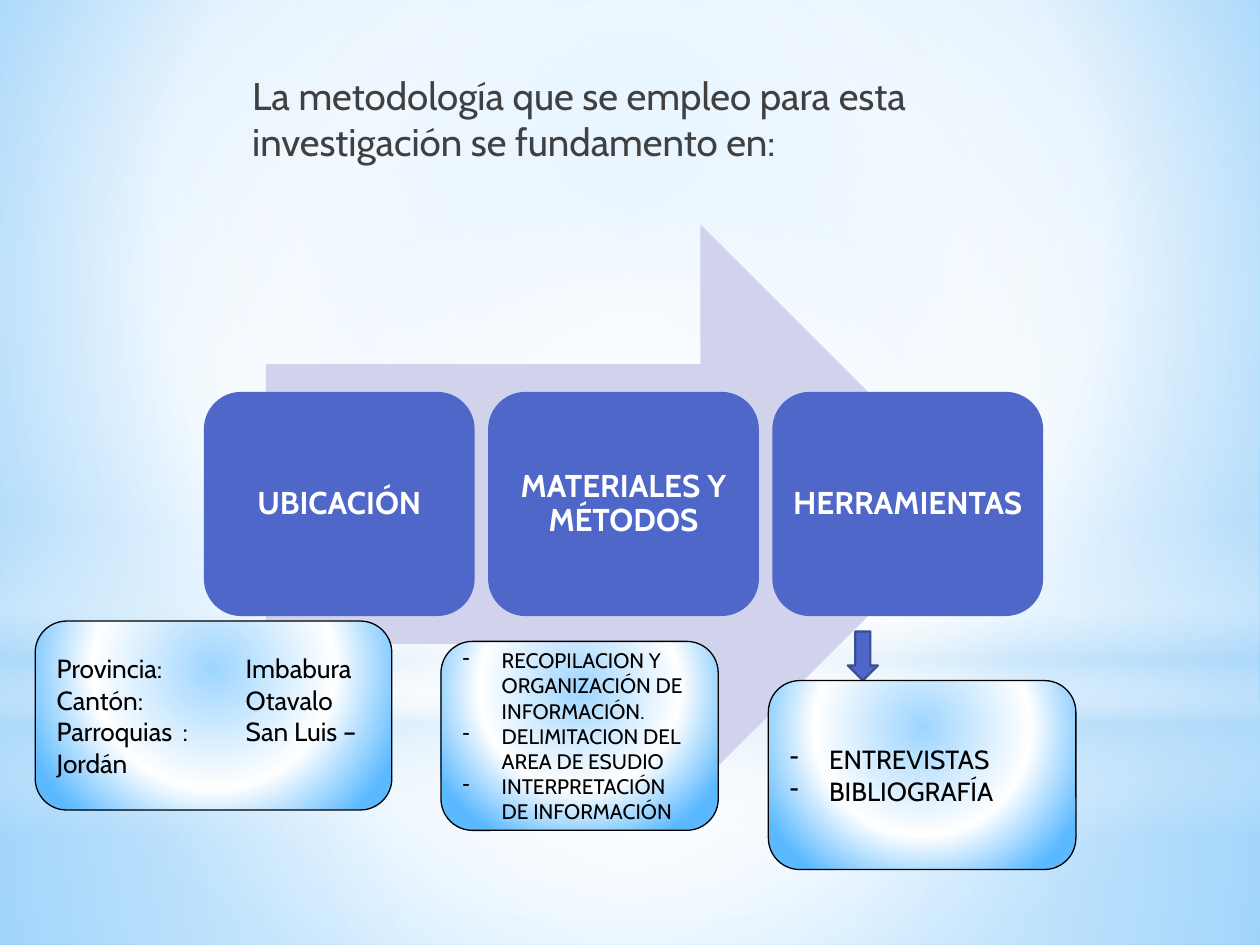
import pptx
import pptx.util
import pptx.oxml
import pptx.oxml.ns
import pptx.dml.color
import pptx.enum.shapes
import pptx.enum.text

Cm = pptx.util.Cm
Pt = pptx.util.Pt
FORM = pptx.enum.shapes.MSO_SHAPE
ALIGN = pptx.enum.text.PP_ALIGN
qn = pptx.oxml.ns.qn

HUES = {
    "white": "FFFFFF", "black": "000000", "text": "404040",
    "card": "4E67C8", "edge": "3A4C94", "arrow": "D0D3EB",
    "sky": "9ED5FF", "deep": "5BB9FF", "mist": "B4DCFA",
}
GLOW = [(0, "sky", 100), (60, "white", 100), (100, "deep", 100)]
HIGH = (20, 10, 20, 60)
MID = (50, 50, 50, 50)


class Deck:
    font = "Cabin"

    def __init__(self, show):
        self.slide = show.slides.add_slide(show.slide_layouts[1])
        title = self.slide.shapes.title
        title.element.getparent().remove(title.element)

    def tint(self, name):
        return pptx.dml.color.RGBColor.from_string(HUES[name])

    def blend(self, host, stops, focus=None):
        marks = "".join(
            f'<a:gs pos="{pos * 1000}"><a:srgbClr val="{HUES[name]}">'
            f'<a:alpha val="{alpha * 1000}"/></a:srgbClr></a:gs>'
            for pos, name, alpha in stops)
        if focus:
            sides = " ".join(f'{side}="{part * 1000}"' for side, part in zip("ltrb", focus))
            course = f'<a:path path="circle"><a:fillToRect {sides}/></a:path>'
        else:
            course = '<a:lin ang="5400000" scaled="0"/>'
        grad = pptx.oxml.parse_xml(
            f'<a:gradFill {pptx.oxml.ns.nsdecls("a")} rotWithShape="1">'
            f'<a:gsLst>{marks}</a:gsLst>{course}</a:gradFill>')
        plain = host.find(qn("a:solidFill"))
        host.replace(plain, grad)

    def back(self, stops, focus):
        self.slide.background.fill.solid()
        self.blend(self.slide.element.find(".//" + qn("p:bgPr")), stops, focus)

    def shape(self, form, box, fill="white", line=None, width=1):
        item = self.slide.shapes.add_shape(form, *map(Cm, box))
        item.shadow.inherit = False
        item.fill.solid()
        item.fill.fore_color.rgb = self.tint(fill)
        if line:
            item.line.color.rgb = self.tint(line)
            item.line.width = Pt(width)
        else:
            item.line.fill.background()
        return item

    def veil(self, form, box, stops, focus=None):
        item = self.shape(form, box)
        self.blend(item.element.spPr, stops, focus)

    def label(self, item, text, size, hue, align=ALIGN.LEFT, bold=False):
        item.text_frame.text = text
        for para in item.text_frame.paragraphs:
            para.alignment = align
            for run in para.runs:
                run.font.name = self.font
                run.font.size = Pt(size)
                run.font.bold = bold
                run.font.color.rgb = self.tint(hue)

    def mark(self, para, left, hang, sign=None):
        props = para._p.get_or_add_pPr()
        props.set("marL", str(Cm(left)))
        props.set("indent", str(Cm(hang)))
        tag = pptx.oxml.ns.nsdecls("a")
        props.append(pptx.oxml.parse_xml(
            f'<a:buChar {tag} char="{sign}"/>' if sign else f"<a:buNone {tag}/>"))

    def lead(self, text, box):
        item = self.slide.placeholders[1]
        self.slide.shapes._spTree.append(item.element)
        item.left, item.top, item.width, item.height = map(Cm, box)
        self.label(item, text, 22, "text")
        item.text_frame.auto_size = pptx.enum.text.MSO_AUTO_SIZE.NONE
        para = item.text_frame.paragraphs[0]
        para.space_after = Pt(3)
        self.mark(para, 0.13, 0)

    def card(self, text, box):
        item = self.shape(FORM.ROUNDED_RECTANGLE, box, "card")
        self.label(item, text, 18, "white", ALIGN.CENTER, True)
        frame = item.text_frame
        frame.margin_left = frame.margin_right = Cm(0.18)
        frame.margin_top = frame.margin_bottom = Cm(0.18)
        frame.paragraphs[0].line_spacing = 0.9

    def note(self, lines, box, size, sign=None):
        item = self.shape(FORM.ROUNDED_RECTANGLE, box, "white", "black", 0.75)
        self.blend(item.element.spPr, GLOW, HIGH)
        self.label(item, "\n".join(lines), size, "black")
        if sign:
            for para in item.text_frame.paragraphs:
                self.mark(para, 0.79, -0.79, sign)


def main():
    show = pptx.Presentation()
    show.slide_width, show.slide_height = Cm(25.4), Cm(19.05)
    deck = Deck(show)

    deck.back(GLOW, HIGH)
    deck.veil(FORM.RECTANGLE, (0, 14.17, 25.4, 4.88),
              [(0, "white", 91), (37, "white", 76), (100, "mist", 79)], MID)
    deck.veil(FORM.RECTANGLE, (0, 0, 25.4, 14.17),
              [(0, "white", 89), (48, "white", 62), (100, "mist", 79)], MID)
    deck.veil(FORM.RECTANGLE, (0, 10.46, 25.4, 6.35),
              [(0, "white", 0), (29, "white", 30), (45, "mist", 40),
               (55, "white", 26), (65, "mist", 60), (100, "white", 0)])
    deck.veil(FORM.OVAL, (0, 4.45, 25.4, 14.17),
              [(0, "white", 100), (56, "white", 0)], MID)

    deck.shape(FORM.DOWN_ARROW, (17.09, 12.73, 0.61, 0.99), "card", "edge", 1.25)
    deck.lead("La metodología que se empleo para esta investigación se fundamento en:",
              (4.7, 1.32, 16.13, 2.69))

    deck.shape(FORM.RIGHT_ARROW, (5.36, 4.52, 14.4, 11.28), "arrow")
    for col, text in enumerate(["UBICACIÓN", "MATERIALES Y MÉTODOS", "HERRAMIENTAS"]):
        deck.card(text, (4.11 + col * 5.73, 7.9, 5.46, 4.52))

    deck.note(["Provincia:\t\tImbabura", "Cantón:\t\tOtavalo",
               "Parroquias\t:\tSan Luis – Jordán"],
              (0.71, 12.52, 7.19, 3.81), 15)
    deck.note(["RECOPILACION Y ORGANIZACIÓN DE INFORMACIÓN.",
               "DELIMITACION DEL AREA DE ESUDIO",
               "INTERPRETACIÓN DE INFORMACIÓN"],
              (8.89, 12.93, 5.59, 3.81), 12, "-")
    deck.note(["ENTREVISTAS", "BIBLIOGRAFÍA"],
              (15.49, 13.72, 6.2, 3.81), 15, "-")

    show.save("out.pptx")


if __name__ == "__main__":
    main()
